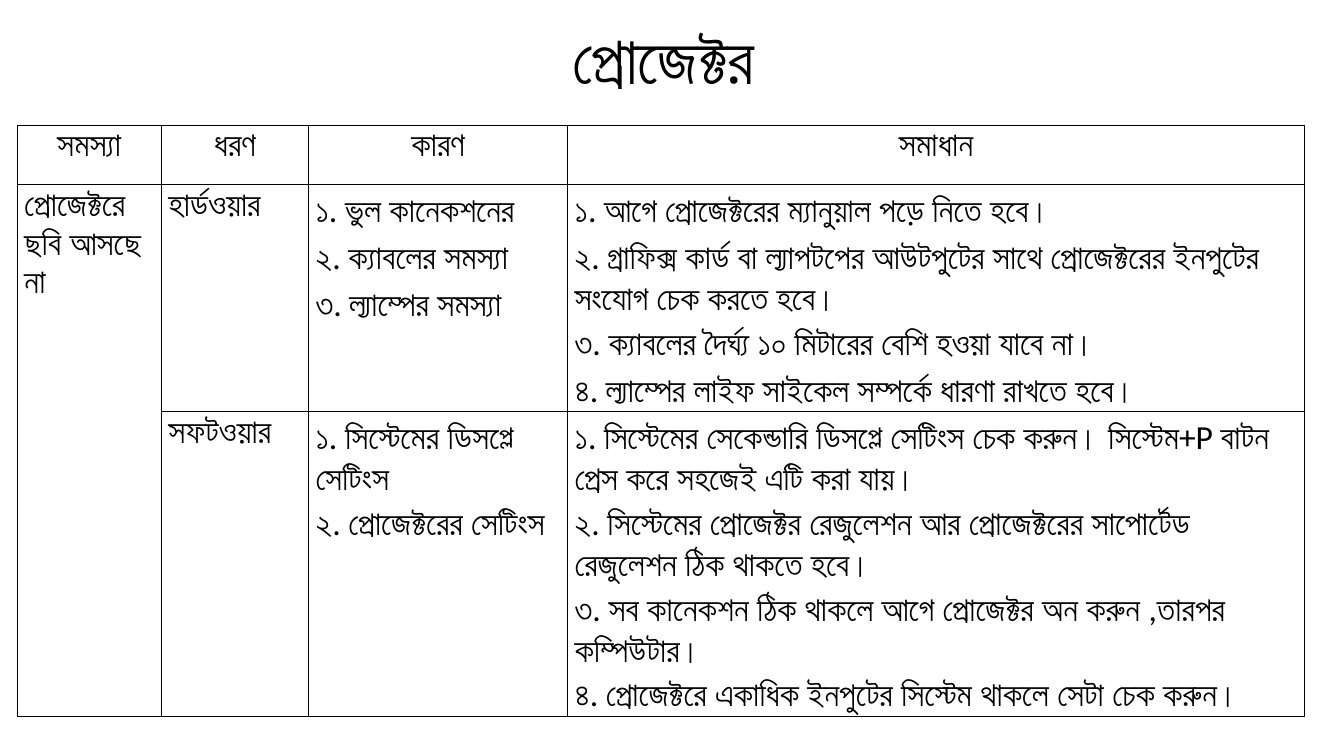
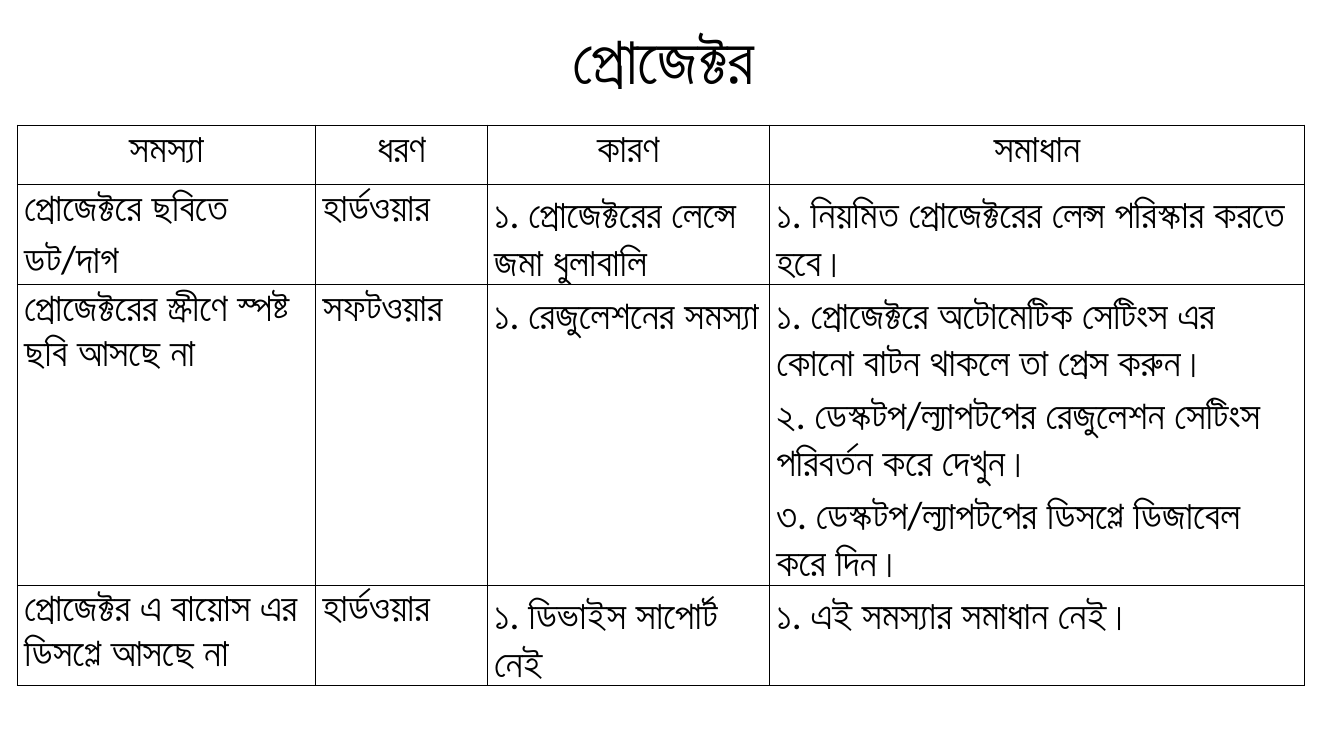
import dataclasses

import lxml.etree
import pptx
import pptx.dml.color
import pptx.enum.text
import pptx.oxml.ns
import pptx.util

Inches = pptx.util.Inches
Pt = pptx.util.Pt
ALIGN = pptx.enum.text.PP_ALIGN

INK = {"text": "000000", "line": "000000", "page": "FFFFFF"}
FONT = "Calibri"
TITLE = "প্রোজেক্টর"
HEADS = ("সমস্যা", "ধরণ", "কারণ", "সমাধান")
HARD = "হার্ডওয়ার"
SOFT = "সফটওয়ার"
LEFT, TOP, PAD = 0.17, 1.24, 0.07


@dataclasses.dataclass(frozen=True)
class Row:
    high: float
    cells: tuple[str, ...]


@dataclasses.dataclass(frozen=True)
class Page:
    size: int
    wide: tuple[float, ...]
    rows: tuple[Row, ...]
    merge: bool = False


HEAD = Row(0.59, HEADS)

PAGES = (
    Page(24, (1.43, 1.46, 2.57, 7.31), (
        HEAD,
        Row(2.25, (
            "প্রোজেক্টরে ছবি আসছে না",
            HARD,
            "১. ভুল কানেকশনের\n"
            "২. ক্যাবলের সমস্যা\n"
            "৩. ল্যাম্পের সমস্যা",
            "১. আগে প্রোজেক্টরের ম্যানুয়াল পড়ে নিতে হবে।\n"
            "২. গ্রাফিক্স কার্ড বা ল্যাপটপের আউটপুটের সাথে প্রোজেক্টরের ইনপুটের সংযোগ চেক করতে হবে।\n"
            "৩. ক্যাবলের দৈর্ঘ্য ১০ মিটারের বেশি হওয়া যাবে না।\n"
            "৪. ল্যাম্পের লাইফ সাইকেল সম্পর্কে ধারণা রাখতে হবে।",
        )),
        Row(3.02, (
            "",
            SOFT,
            "১. সিস্টেমের ডিসপ্লে সেটিংস\n"
            "২. প্রোজেক্টরের সেটিংস",
            "১. সিস্টেমের সেকেন্ডারি ডিসপ্লে সেটিংস চেক করুন। সিস্টেম+P বাটন প্রেস করে সহজেই এটি করা যায়।\n"
            "২. সিস্টেমের প্রোজেক্টর রেজুলেশন আর প্রোজেক্টরের সাপোর্টেড রেজুলেশন ঠিক থাকতে হবে।\n"
            "৩. সব কানেকশন ঠিক থাকলে আগে প্রোজেক্টর অন করুন ,তারপর কম্পিউটার।\n"
            "৪. প্রোজেক্টরে একাধিক ইনপুটের সিস্টেম থাকলে সেটা চেক করুন।",
        )),
    ), merge=True),
    Page(28, (2.96, 1.7, 2.8, 5.31), (
        HEAD,
        Row(0.99, (
            "প্রোজেক্টরে ছবিতে ডট/দাগ",
            HARD,
            "১. প্রোজেক্টরের লেন্সে জমা ধুলাবালি",
            "১. নিয়মিত প্রোজেক্টরের লেন্স পরিস্কার করতে হবে।",
        )),
        Row(2.98, (
            "প্রোজেক্টরের স্ক্রীণে স্পষ্ট ছবি আসছে না",
            SOFT,
            "১. রেজুলেশনের সমস্যা",
            "১. প্রোজেক্টরে অটোমেটিক সেটিংস এর কোনো বাটন থাকলে তা প্রেস করুন।\n"
            "২. ডেস্কটপ/ল্যাপটপের রেজুলেশন সেটিংস পরিবর্তন করে দেখুন।\n"
            "৩. ডেস্কটপ/ল্যাপটপের ডিসপ্লে ডিজাবেল করে দিন।",
        )),
        Row(0.99, (
            "প্রোজেক্টর এ বায়োস এর ডিসপ্লে আসছে না",
            HARD,
            "১. ডিভাইস সাপোর্ট নেই",
            "১. এই সমস্যার সমাধান নেই।",
        )),
    )),
)


def tint(name: str) -> pptx.dml.color.RGBColor:
    return pptx.dml.color.RGBColor.from_string(INK[name])


def set_text(frame, text: str, size: int, bold: bool, align, space: float) -> None:
    frame.text = text
    for para in frame.paragraphs:
        para.alignment = align
        para.line_spacing = space
        for run in para.runs:
            run.font.name = FONT
            run.font.size = Pt(size)
            run.font.bold = bold
            run.font.color.rgb = tint("text")


def add_edge(cell) -> None:
    props = cell._tc.get_or_add_tcPr()
    tag = pptx.oxml.ns.qn
    for side in ("lnL", "lnR", "lnT", "lnB"):
        edge = lxml.etree.SubElement(props, tag(f"a:{side}"), w=str(Pt(0.5)))
        fill = lxml.etree.SubElement(edge, tag("a:solidFill"))
        lxml.etree.SubElement(fill, tag("a:srgbClr"), val=INK["line"])


def add_title(slide) -> None:
    title = slide.shapes.title
    title.left, title.top = Inches(0.83), Inches(0.18)
    title.width, title.height = Inches(11.5), Inches(0.88)
    frame = title.text_frame
    frame.auto_size = pptx.enum.text.MSO_AUTO_SIZE.NONE
    frame.vertical_anchor = pptx.enum.text.MSO_ANCHOR.MIDDLE
    set_text(frame, TITLE, 48, True, ALIGN.CENTER, 0.9)


def add_grid(slide, page: Page) -> None:
    high = sum(row.high for row in page.rows)
    grid = slide.shapes.add_table(
        len(page.rows), len(page.wide), Inches(LEFT), Inches(TOP),
        Inches(sum(page.wide)), Inches(high)).table
    grid.first_row = grid.horz_banding = False
    for col, wide in zip(grid.columns, page.wide):
        col.width = Inches(wide)
    for i, row in enumerate(page.rows):
        grid.rows[i].height = Inches(row.high)
        top = i == 0
        align = ALIGN.CENTER if top else ALIGN.LEFT
        for j, text in enumerate(row.cells):
            cell = grid.cell(i, j)
            cell.margin_left = cell.margin_right = Inches(PAD)
            cell.margin_top = cell.margin_bottom = 0
            add_edge(cell)
            cell.fill.solid()
            cell.fill.fore_color.rgb = tint("page")
            set_text(cell.text_frame, text, page.size, top, align, 1.15)
    if page.merge:
        grid.cell(1, 0).merge(grid.cell(2, 0))


def main() -> None:
    deck = pptx.Presentation()
    deck.slide_width, deck.slide_height = Inches(13.33), Inches(7.5)
    for page in PAGES:
        slide = deck.slides.add_slide(deck.slide_layouts[5])
        add_title(slide)
        add_grid(slide, page)
    deck.save("out.pptx")


if __name__ == "__main__":
    main()
